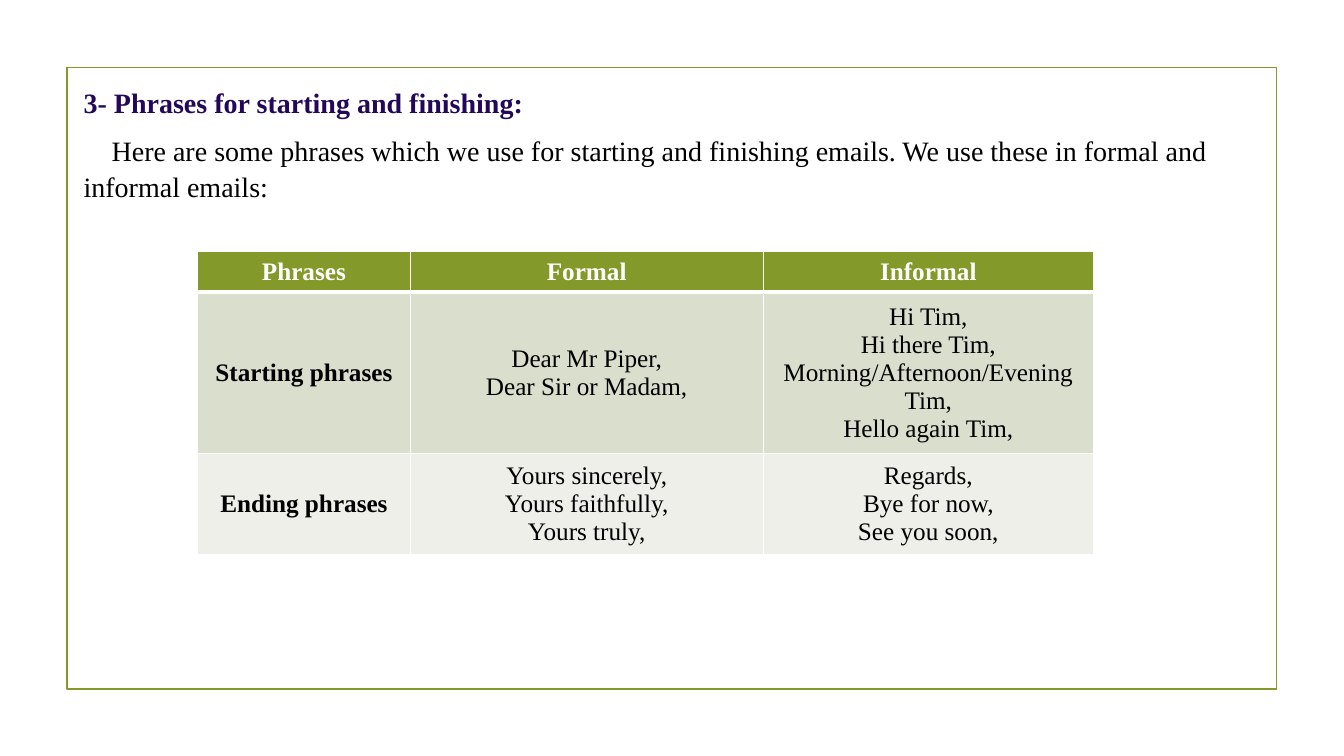
"""Build a slide of phrases for starting and finishing emails."""
from dataclasses import dataclass

from lxml import etree
from pptx import Presentation
from pptx.dml.color import RGBColor
from pptx.enum import shapes, text
from pptx.oxml import ns
from pptx.util import Pt


@dataclass(frozen=True)
class Theme:
    font: str = "Times New Roman"
    olive: str = "83992A"
    heading: str = "23085A"
    ink: str = "000000"
    white: str = "FFFFFF"
    starting: str = "D9DECD"
    ending: str = "EDEFE8"
    body_size: float = 20
    table_size: float = 18


@dataclass(frozen=True)
class PhraseRow:
    label: str
    formal: str
    informal: str
    height: float
    fill: str
    ink: str = Theme.ink
    header: bool = False


THEME = Theme()
COLUMN_WIDTHS = (152, 252, 236)
PHRASE_ROWS = (
    PhraseRow("Phrases", "Formal", "Informal", 29.3, THEME.olive, THEME.white, True),
    PhraseRow(
        "Starting phrases",
        "Dear Mr Piper,\vDear Sir or Madam,",
        "Hi Tim,\vHi there Tim,\vMorning/Afternoon/Evening Tim,\vHello again Tim,",
        115.2,
        THEME.starting,
    ),
    PhraseRow(
        "Ending phrases",
        "Yours sincerely,\vYours faithfully,\vYours truly,",
        "Regards,\vBye for now,\vSee you soon,",
        72,
        THEME.ending,
    ),
)


def write(paragraph, words: str, *, size: float, color: str, bold: bool = False,
          align=text.PP_ALIGN.LEFT, after: float = 0, spacing: float = 1.0,
          indent: float = 0) -> None:
    """Fill a paragraph with formatted words."""
    paragraph.text = words
    paragraph.alignment = align
    paragraph.space_after = Pt(after)
    paragraph.line_spacing = spacing
    if indent:
        properties = paragraph._p.get_or_add_pPr()
        properties.set("marL", "0")
        properties.set("indent", str(Pt(indent)))
    for run in paragraph.runs:
        run.font.name = THEME.font
        run.font.size = Pt(size)
        run.font.bold = bold
        run.font.color.rgb = RGBColor.from_string(color)


def add_frame(slide) -> None:
    """Draw the olive outline around the content."""
    frame = slide.shapes.add_shape(
        shapes.MSO_SHAPE.RECTANGLE, Pt(47.8), Pt(48.2), Pt(864), Pt(444.2))
    frame.shadow.inherit = False
    frame.fill.background()
    frame.line.color.rgb = RGBColor.from_string(THEME.olive)
    frame.line.width = Pt(1.25)


def add_introduction(slide) -> None:
    """Add the heading and the sentence that leads to the table."""
    introduction = slide.shapes.add_textbox(Pt(52.6), Pt(56.2), Pt(834.5), Pt(89.3)).text_frame
    introduction.word_wrap = True
    write(introduction.paragraphs[0], "3- Phrases for starting and finishing:",
          size=THEME.body_size, color=THEME.heading, bold=True, after=9.4, spacing=1.05)
    write(introduction.add_paragraph(),
          "Here are some phrases which we use for starting and finishing emails. "
          "We use these in formal and informal emails:",
          size=THEME.body_size, color=THEME.ink, after=9.4, spacing=1.05, indent=20)


def add_borders(cell, top: float, bottom: float) -> None:
    """Give a cell white borders."""
    properties = cell._tc.get_or_add_tcPr()
    for side, width in (("L", 1), ("R", 1), ("T", top), ("B", bottom)):
        border = etree.SubElement(properties, ns.qn(f"a:ln{side}"), w=str(Pt(width)))
        paint = etree.SubElement(border, ns.qn("a:solidFill"))
        etree.SubElement(paint, ns.qn("a:srgbClr"), val=THEME.white)


def add_phrase_table(slide) -> None:
    """Add the table of formal and informal phrases."""
    phrases = slide.shapes.add_table(
        len(PHRASE_ROWS), len(COLUMN_WIDTHS), Pt(141.1), Pt(179.3),
        Pt(sum(COLUMN_WIDTHS)), Pt(sum(row.height for row in PHRASE_ROWS))).table
    for column, width in zip(phrases.columns, COLUMN_WIDTHS):
        column.width = Pt(width)
    for index, row in enumerate(PHRASE_ROWS):
        phrases.rows[index].height = Pt(row.height)
        for place, words in enumerate((row.label, row.formal, row.informal)):
            cell = phrases.cell(index, place)
            add_borders(cell, 3 if index == 1 else 1, 3 if row.header else 1)
            cell.fill.solid()
            cell.fill.fore_color.rgb = RGBColor.from_string(row.fill)
            cell.vertical_anchor = text.MSO_ANCHOR.MIDDLE
            write(cell.text_frame.paragraphs[0], words, size=THEME.table_size,
                  color=row.ink, bold=row.header or place == 0,
                  align=text.PP_ALIGN.CENTER)


def main() -> None:
    """Build and save the slide."""
    presentation = Presentation()
    presentation.slide_width, presentation.slide_height = Pt(960), Pt(540)
    slide = presentation.slides.add_slide(presentation.slide_layouts[6])
    add_frame(slide)
    add_introduction(slide)
    add_phrase_table(slide)
    presentation.save("out.pptx")


if __name__ == "__main__":
    main()
